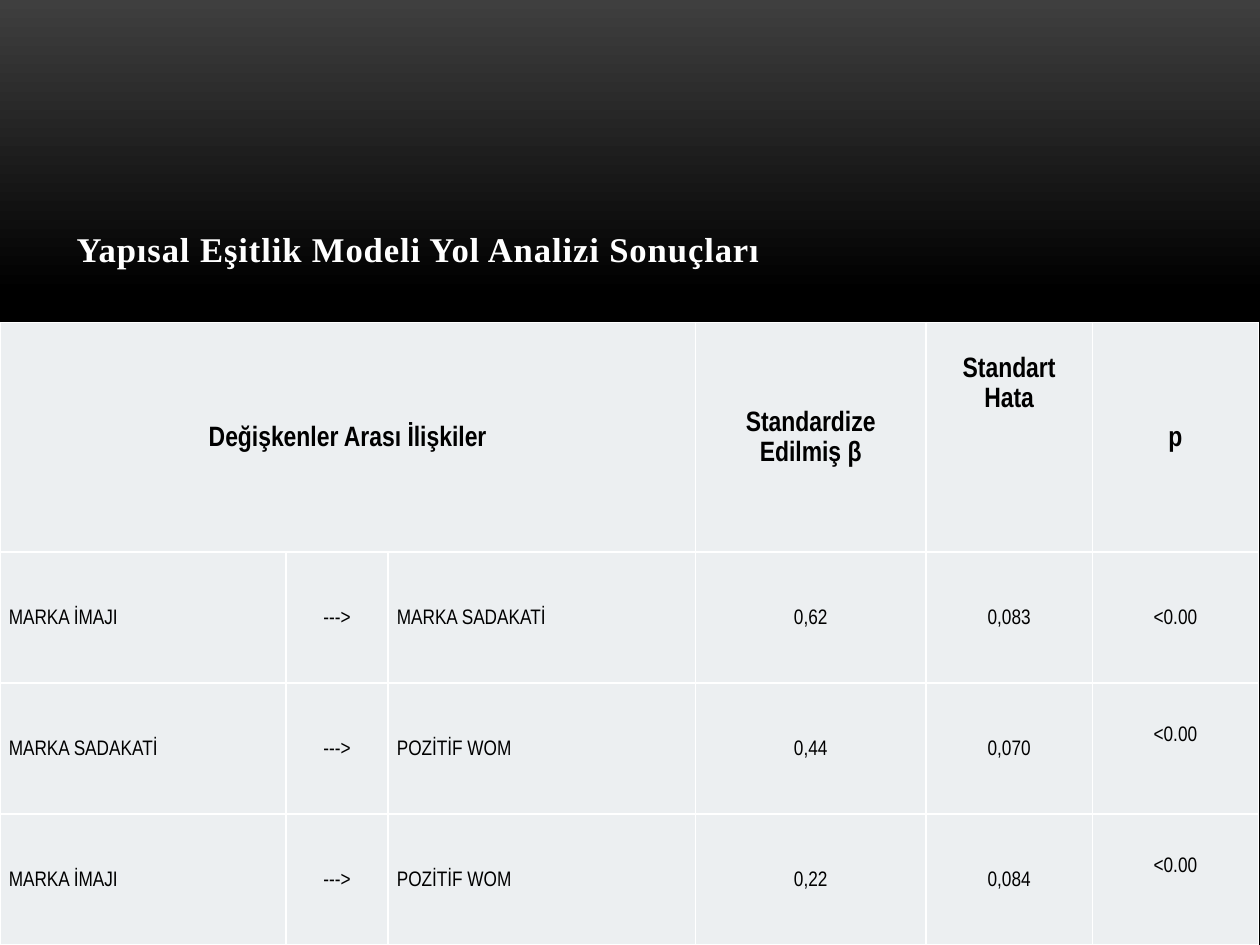
from copy import deepcopy
from dataclasses import dataclass

from lxml import etree
from pptx import Presentation
from pptx import util as u
from pptx.dml.color import RGBColor
from pptx.enum import text
from pptx.oxml.ns import qn


@dataclass(frozen=True)
class Theme:
    title_font: str = "Times New Roman"
    table_font: str = "Arial Narrow"
    title_size: float = 19.8
    header_size: float = 16
    body_size: float = 12
    glow: str = "3F3F3F"
    dark: str = "000000"
    light: str = "FFFFFF"
    cell: str = "ECEFF1"


THEME = Theme()
CENTER, LEFT = text.PP_ALIGN.CENTER, text.PP_ALIGN.LEFT
TOP, MIDDLE = text.MSO_ANCHOR.TOP, text.MSO_ANCHOR.MIDDLE

TITLE = "Yapısal Eşitlik Modeli Yol Analizi Sonuçları"
HEADERS = {0: "Değişkenler Arası İlişkiler", 3: "Standardize\nEdilmiş β",
           4: "Standart Hata", 5: "p"}
PATHS = [
    ("MARKA İMAJI", "--->", "MARKA SADAKATİ", "0,62", "0,083", "<0.00"),
    ("MARKA SADAKATİ", "--->", "POZİTİF WOM", "0,44", "0,070", "<0.00"),
    ("MARKA İMAJI", "--->", "POZİTİF WOM", "0,22", "0,084", "<0.00"),
]
COLUMN_WIDTHS = [2.27, 0.81, 2.44, 1.83, 1.32, 1.32]
ROW_HEIGHTS = [1.82] + [1.04] * len(PATHS)


def write(frame, words, *, font, size, color, bold=False, align=LEFT,
          line_spacing=None, tracking=None):
    """Fill a text frame, one paragraph for each line of words."""
    frame.word_wrap = True
    for index, line in enumerate(words.split("\n")):
        paragraph = frame.add_paragraph() if index else frame.paragraphs[0]
        paragraph.alignment = align
        paragraph.line_spacing = line_spacing
        run = paragraph.add_run()
        run.text = line
        run.font.name = font
        run.font.size = u.Pt(size)
        run.font.bold = bold
        run.font.color.rgb = RGBColor.from_string(color)
        if tracking:
            run.font._element.set("spc", str(int(tracking * 100)))


def paint_background(slide):
    fill = slide.background.fill
    fill.gradient()
    fill.gradient_angle = 270
    stop_list = fill._fill._gradFill.find(qn("a:gsLst"))
    stop_list.append(deepcopy(stop_list[-1]))
    stops = zip(fill.gradient_stops, (0, 0.31, 1),
                (THEME.glow, THEME.dark, THEME.dark))
    for stop, position, color in stops:
        stop.position = position
        stop.color.rgb = RGBColor.from_string(color)


def add_title(slide):
    title = slide.shapes.add_textbox(u.Inches(0.51), u.Inches(1.62),
                                     u.Inches(9), u.Inches(1.01))
    frame = title.text_frame
    frame.vertical_anchor = text.MSO_ANCHOR.BOTTOM
    frame.margin_bottom = u.Inches(0.49)
    write(frame, TITLE, font=THEME.title_font, size=THEME.title_size,
          color=THEME.light, bold=True, tracking=0.5)


def add_borders(cell):
    properties = cell._tc.get_or_add_tcPr()
    for index, side in enumerate(("lnL", "lnR", "lnT", "lnB")):
        line = etree.Element(qn(f"a:{side}"), w=str(u.Pt(1)))
        solid = etree.SubElement(line, qn("a:solidFill"))
        etree.SubElement(solid, qn("a:srgbClr"), val=THEME.light)
        properties.insert(index, line)


def style_cell(cell):
    cell.fill.solid()
    cell.fill.fore_color.rgb = RGBColor.from_string(THEME.cell)
    cell.margin_left = cell.margin_right = u.Inches(0.07)
    cell.margin_top = cell.margin_bottom = 0
    add_borders(cell)


def fill_cell(cell, words, size, drop=0, **form):
    """Centre the words vertically, or hang them a drop below the top."""
    cell.vertical_anchor = TOP if drop else MIDDLE
    cell.margin_top = u.Inches(drop)
    write(cell.text_frame, words, font=THEME.table_font, size=size,
          color=THEME.dark, line_spacing=1.15, **form)


def add_path_table(slide):
    frame = slide.shapes.add_table(
        len(ROW_HEIGHTS), len(COLUMN_WIDTHS), 0, u.Inches(2.56),
        u.Inches(sum(COLUMN_WIDTHS)), u.Inches(sum(ROW_HEIGHTS)))
    table = frame.table
    table.first_row = table.horz_banding = False
    for column, width in zip(table.columns, COLUMN_WIDTHS):
        column.width = u.Inches(width)
    for row, height in zip(table.rows, ROW_HEIGHTS):
        row.height = u.Inches(height)
    for cell in table.iter_cells():
        style_cell(cell)

    # Header row, with one heading over the three relation columns
    table.cell(0, 0).merge(table.cell(0, 2))
    for column, heading in HEADERS.items():
        fill_cell(table.cell(0, column), heading, THEME.header_size,
                  drop=0.24 if column == 4 else 0, bold=True, align=CENTER)

    # One row per path; variable names are left aligned
    for row, path in enumerate(PATHS, start=1):
        for column, value in enumerate(path):
            hangs = column == 5 and row > 1
            fill_cell(table.cell(row, column), value, THEME.body_size,
                      drop=0.32 if hangs else 0,
                      align=LEFT if column in (0, 2) else CENTER)


def main():
    deck = Presentation()
    deck.slide_width, deck.slide_height = u.Inches(10), u.Inches(7.5)
    slide = deck.slides.add_slide(deck.slide_layouts[6])
    paint_background(slide)
    add_title(slide)
    add_path_table(slide)
    deck.save("out.pptx")


if __name__ == "__main__":
    main()
